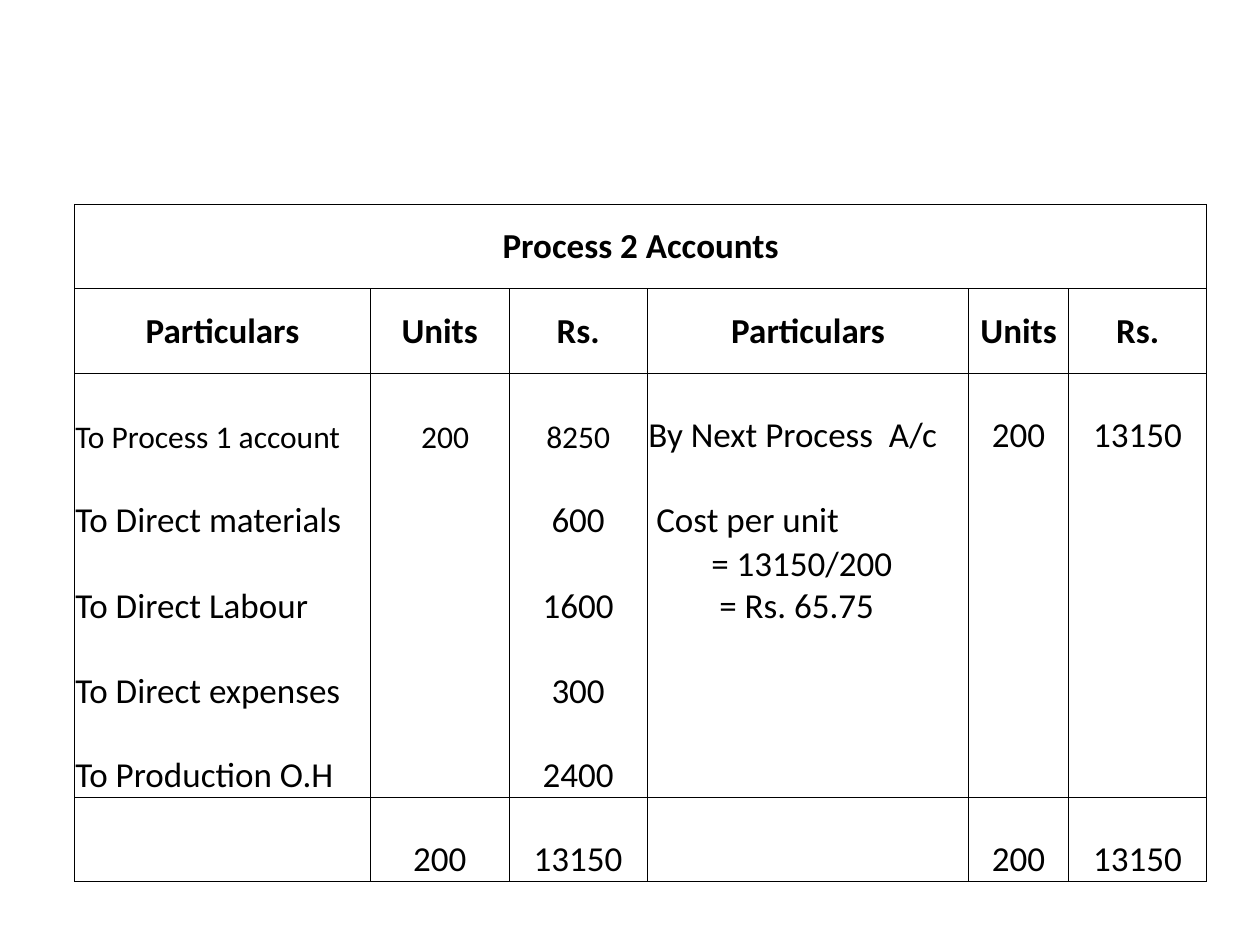
from dataclasses import dataclass

from lxml import etree
from pptx import Presentation
from pptx.dml.color import RGBColor
from pptx.enum import text
from pptx.oxml import ns
from pptx.util import Cm, Pt

INK = "000000"
FONT = "Calibri"
MID = text.PP_ALIGN.CENTER
LEFT = text.PP_ALIGN.LEFT
WIDTHS = (5.97, 2.79, 2.79, 6.48, 2.01, 2.79)
HEIGHT = 1.7
HEADS = 2  # title row and column heads


@dataclass
class Line:
    words: str
    align: text.PP_ALIGN = MID
    size: int = 20
    bold: bool = False
    indent: float = 0


def head(words: str) -> list[Line]:
    return [Line(words, bold=True)]


def item(words: str, size: int = 20, indent: float = 0) -> list[Line]:
    return [Line(words, LEFT, size, indent=indent)]


def num(words: str, size: int = 20) -> list[Line]:
    return [Line(words, size=size)]


NAMES = [head(name) for name in ("Particulars", "Units", "Rs.")]
TOTAL = [[], num("200"), num("13150")]
RATE = item("= 13150/200", indent=1.27) + item("= Rs. 65.75", indent=1.43)
ROWS = [
    [head("Process 2 Accounts")],
    NAMES * 2,
    [item("To Process 1 account", 18), item("200", 18, 1), num("8250", 18),
     item("By Next Process  A/c"), num("200"), num("13150")],
    [item("To Direct materials"), [], num("600"),
     item("Cost per unit", indent=0.16)],
    [item("To Direct Labour"), [], num("1600"), RATE],
    [item("To Direct expenses"), [], num("300")],
    [item("To Production O.H"), [], num("2400")],
    TOTAL * 2,
]


def color(code: str) -> RGBColor:
    return RGBColor.from_string(code)


def edge(cell, sides: str) -> None:
    """Rule the named sides (of L, R, T, B) and clear the others."""
    props = cell._tc.get_or_add_tcPr()
    for spot, side in enumerate("LRTB"):
        rule = etree.Element(ns.qn(f"a:ln{side}"), w=str(Pt(0.5)))
        if side in sides:
            fill = etree.SubElement(rule, ns.qn("a:solidFill"))
            etree.SubElement(fill, ns.qn("a:srgbClr"), val=INK)
        else:
            etree.SubElement(rule, ns.qn("a:noFill"))
        props.insert(spot, rule)


def write(cell, lines: list[Line]) -> None:
    frame = cell.text_frame
    for n, line in enumerate(lines):
        para = frame.add_paragraph() if n else frame.paragraphs[0]
        para.alignment = line.align
        if line.indent:
            para._p.get_or_add_pPr().set("marL", str(Cm(line.indent)))
        run = para.add_run()
        run.text = line.words
        run.font.name = FONT
        run.font.size = Pt(line.size)
        run.font.bold = line.bold
        run.font.color.rgb = color(INK)


def sides(row: int) -> str:
    """Entry rows share one open box; every other row is ruled all round."""
    first, last = HEADS, len(ROWS) - 2
    top = "T" if row <= first or row > last else ""
    base = "B" if row < first or row >= last else ""
    return "LR" + top + base


def ledger(slide) -> None:
    frame = slide.shapes.add_table(
        len(ROWS), len(WIDTHS), Cm(1.5), Cm(4.12),
        Cm(sum(WIDTHS)), Cm(HEIGHT * len(ROWS)))
    table = frame.table
    table.first_row = table.horz_banding = False
    for col, width in zip(table.columns, WIDTHS):
        col.width = Cm(width)
    for r, cells in enumerate(ROWS):
        table.rows[r].height = Cm(HEIGHT)
        for c in range(len(WIDTHS)):
            cell = table.cell(r, c)
            cell.fill.background()
            edge(cell, sides(r))
            cell.margin_left = cell.margin_right = cell.margin_top = Cm(0.02)
            cell.margin_bottom = 0
            cell.vertical_anchor = (text.MSO_ANCHOR.MIDDLE if r < HEADS
                                    else text.MSO_ANCHOR.BOTTOM)
            if c < len(cells):
                write(cell, cells[c])
    table.cell(0, 0).merge(table.cell(0, len(WIDTHS) - 1))


def main() -> None:
    deck = Presentation()
    deck.slide_width, deck.slide_height = Cm(25.4), Cm(19.05)
    ledger(deck.slides.add_slide(deck.slide_layouts[6]))
    deck.save("out.pptx")


if __name__ == "__main__":
    main()
